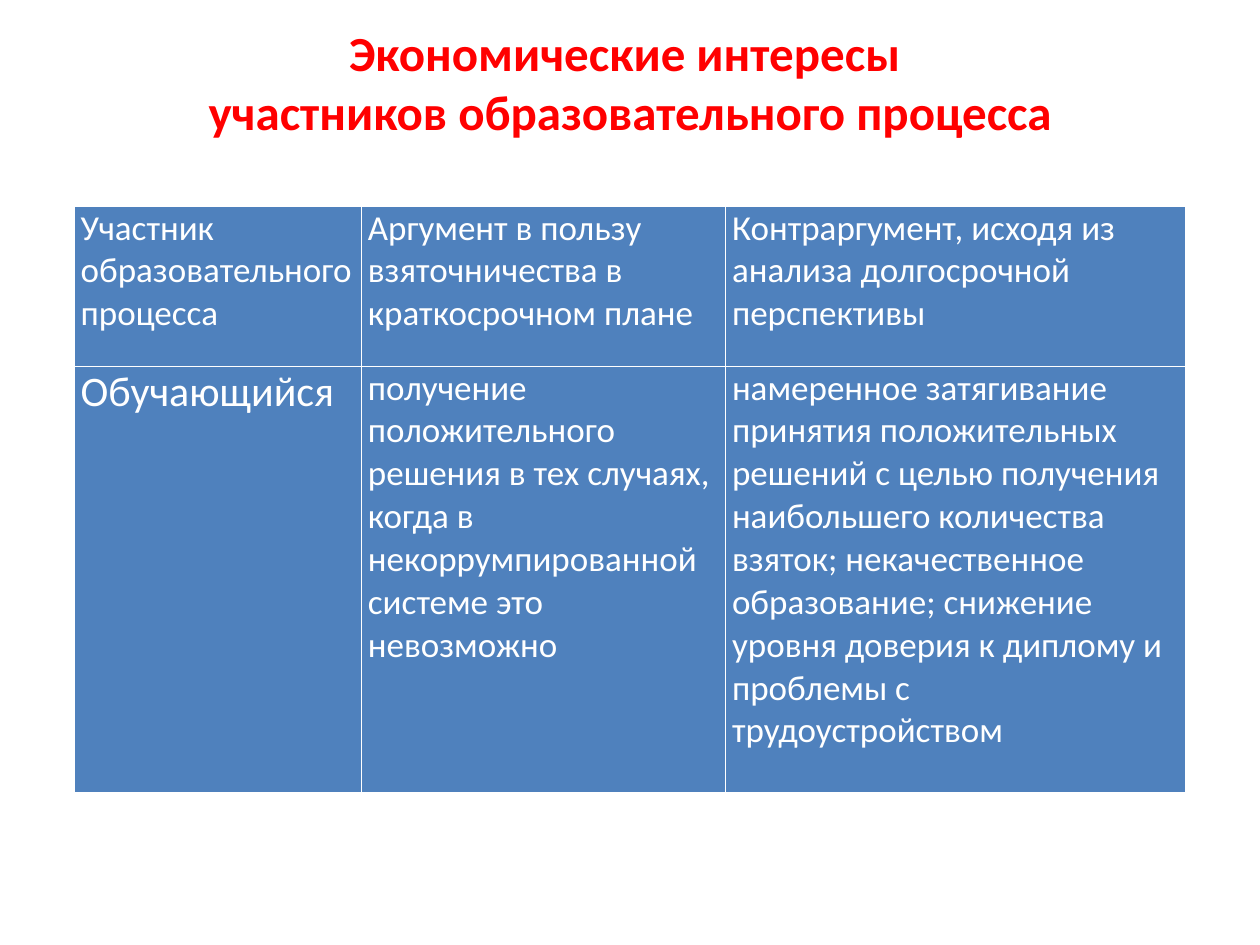
from dataclasses import dataclass

from pptx import Presentation
from pptx.dml.color import RGBColor
from pptx.enum.text import MSO_AUTO_SIZE, PP_ALIGN
from pptx.util import Inches, Pt

CENTER = PP_ALIGN.CENTER
GROW = MSO_AUTO_SIZE.SHAPE_TO_FIT_TEXT
BLANK_LAYOUT = 6


@dataclass(frozen=True)
class Theme:
    font: str = "Calibri"
    title_color: RGBColor = RGBColor(0xFF, 0x00, 0x00)
    cell_text: RGBColor = RGBColor(0xFF, 0xFF, 0xFF)
    cell_fill: RGBColor = RGBColor(0x4F, 0x81, 0xBD)
    title_size: int = 28
    cell_size: int = 20
    participant_size: int = 24


TITLE = ["Экономические интересы ", "участников образовательного процесса"]
COLUMN_WIDTHS = [2.28, 2.89, 3.65]
ROW_HEIGHTS = [1.27, 3.38]
ROWS = [
    [
        "Участник образовательного процесса",
        "Аргумент в пользу взяточничества в краткосрочном плане",
        "Контраргумент, исходя из анализа долгосрочной перспективы",
    ],
    [
        "Обучающийся",
        "получение положительного решения в тех случаях, когда в "
        "некоррумпированной системе это невозможно",
        "намеренное затягивание принятия положительных решений с целью "
        "получения наибольшего количества взяток; некачественное образование; "
        "снижение уровня доверия к диплому и проблемы с трудоустройством",
    ],
]


class SlideBuilder:
    """Draws themed elements on one slide."""

    def __init__(self, slide, theme):
        self.slide = slide
        self.theme = theme

    def format_runs(self, paragraph, size, color, bold):
        for span in paragraph.runs:
            span.font.name = self.theme.font
            span.font.size = Pt(size)
            span.font.color.rgb = color
            span.font.bold = bold

    def title(self, lines, left, top, width, height):
        box = self.slide.shapes.add_textbox(
            Inches(left), Inches(top), Inches(width), Inches(height))
        frame = box.text_frame
        frame.word_wrap = True
        frame.auto_size = GROW
        frame.text = "\n".join(lines)
        for para in frame.paragraphs:
            para.alignment = CENTER
            self.format_runs(para, self.theme.title_size, self.theme.title_color, True)

    def table(self, rows, left, top, column_widths, row_heights):
        """Add a table whose white rules come from the default table style."""
        table = self.slide.shapes.add_table(
            len(rows), len(column_widths), Inches(left), Inches(top),
            Inches(sum(column_widths)), Inches(sum(row_heights))).table
        table.horz_banding = False
        for column, width in zip(table.columns, column_widths):
            column.width = Inches(width)
        for row, height, texts in zip(table.rows, row_heights, rows):
            row.height = Inches(height)
            for cell, text in zip(row.cells, texts):
                self.fill_cell(cell, text)
        return table

    def fill_cell(self, cell, text):
        cell.fill.solid()
        cell.fill.fore_color.rgb = self.theme.cell_fill
        cell.margin_left = cell.margin_right = Inches(0.05)
        cell.margin_top = cell.margin_bottom = 0
        cell.text_frame.text = text
        self.format_runs(cell.text_frame.paragraphs[0], self.theme.cell_size,
                         self.theme.cell_text, False)


def main():
    deck = Presentation()
    deck.slide_width, deck.slide_height = Inches(10), Inches(7.5)
    theme = Theme()
    page = SlideBuilder(deck.slides.add_slide(deck.slide_layouts[BLANK_LAYOUT]), theme)

    page.title(TITLE, 0, 0.13, 10, 1.04)
    interests = page.table(ROWS, 0.59, 1.64, COLUMN_WIDTHS, ROW_HEIGHTS)
    participant = interests.cell(1, 0).text_frame.paragraphs[0]
    page.format_runs(participant, theme.participant_size, theme.cell_text, False)

    deck.save("out.pptx")


if __name__ == "__main__":
    main()
